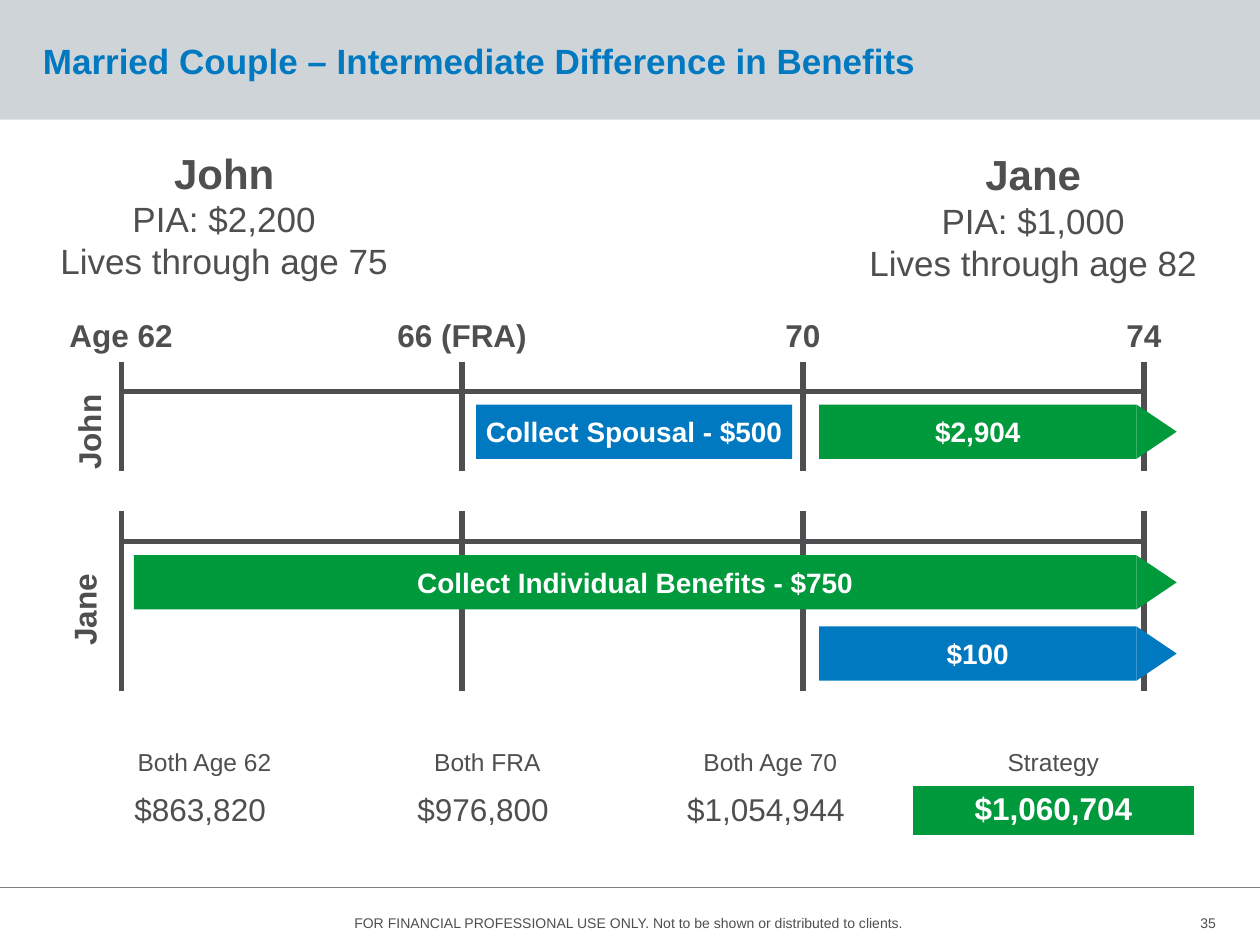
import pptx
import pptx.util
import pptx.dml.color
import pptx.enum.shapes
import pptx.enum.text
import lxml.etree

Pt = pptx.util.Pt
RGB = pptx.dml.color.RGBColor.from_string
SHAPES = pptx.enum.shapes.MSO_SHAPE
ALIGN = pptx.enum.text.PP_ALIGN
ANCHOR = pptx.enum.text.MSO_ANCHOR
COLORS = {"text": "4F4E50", "blue": "0079C1", "green": "009A3D",
          "band": "CFD4D8", "rule": "7E8083", "white": "FFFFFF"}
DRAWING = "http://schemas.openxmlformats.org/drawingml/2006/main"

deck = pptx.Presentation()
deck.slide_width, deck.slide_height = Pt(720), Pt(540)
page = deck.slides.add_slide(deck.slide_layouts[6])


def write(frame, text, size, color="text", bold=False, align=ALIGN.CENTER,
          margins=(7.2, 3.6), anchor=ANCHOR.TOP, wrap=True):
    frame.word_wrap = wrap
    frame.vertical_anchor = anchor
    frame.margin_left = frame.margin_right = Pt(margins[0])
    frame.margin_top = frame.margin_bottom = Pt(margins[1])
    para = frame.paragraphs[0]
    para.text = text
    para.alignment = align
    for span in para.runs:
        span.font.name = "Arial"
        span.font.size = Pt(size)
        span.font.bold = bold
        span.font.color.rgb = RGB(COLORS[color])
    return para


def draw_line(x1, y1, x2, y2, color="text", width=3):
    line = page.shapes.add_connector(
        pptx.enum.shapes.MSO_CONNECTOR.STRAIGHT, Pt(x1), Pt(y1), Pt(x2), Pt(y2))
    line.line.color.rgb = RGB(COLORS[color])
    line.line.width = Pt(width)
    properties = line._element.spPr
    lxml.etree.SubElement(properties, "{%s}effectLst" % DRAWING)


# Header band, title and footer rule
band = page.shapes.add_shape(SHAPES.RECTANGLE, 0, Pt(-0.5), Pt(720), Pt(69))
band.shadow.inherit = False
band.fill.solid()
band.fill.fore_color.rgb = RGB(COLORS["band"])
band.line.fill.background()
draw_line(0, 507, 720, 507, "rule", 0.75)
title = page.shapes.add_textbox(Pt(24.5), Pt(13), Pt(669), Pt(47))
heading = write(title.text_frame, "Married Couple – Intermediate Difference in Benefits",
                20, "blue", True, ALIGN.LEFT, (0, 0), ANCHOR.MIDDLE)
heading.line_spacing = Pt(20)

# Lifetime totals of each strategy
totals = [("Both Age 62", "$863,820 "), ("Both FRA", "$976,800 "),
          ("Both Age 70", "$1,054,944 "), ("Strategy", "$1,060,704")]
table = page.shapes.add_table(2, 4, Pt(36), Pt(424.8), Pt(646.8), Pt(52.8)).table
table.first_row = table.horz_banding = False
table.rows[0].height, table.rows[1].height = Pt(24), Pt(28.8)
for index, (label, total) in enumerate(totals):
    table.columns[index].width = Pt(161.7)
    best = label == "Strategy"
    for row, text in enumerate((label, total)):
        cell = table.cell(row, index)
        plain_total = row == 1 and not best
        highlight = row == 1 and best
        cell.margin_left = cell.margin_right = Pt(0 if plain_total else 7.2)
        cell.margin_top = cell.margin_bottom = Pt(0 if plain_total else 3.6)
        cell.vertical_anchor = ANCHOR.MIDDLE if plain_total else ANCHOR.TOP
        if highlight:
            cell.fill.solid()
            cell.fill.fore_color.rgb = RGB(COLORS["green"])
        else:
            cell.fill.background()
        para = cell.text_frame.paragraphs[0]
        para.text = text
        para.alignment = ALIGN.CENTER
        font = para.runs[0].font
        font.name, font.size, font.bold = "Arial", Pt(18 if row else 14), highlight
        font.color.rgb = RGB(COLORS["white" if highlight else "text"])

# Timelines: one axis per person with a tick at each age
ticks = [69.25 + 194.8 * step for step in range(4)]
for top, axis, bottom in [(206.6, 223.9, 269.3), (292.3, 309.6, 394.6)]:
    draw_line(ticks[0], axis, ticks[-1], axis)
    for x in ticks:
        draw_line(x, top, x, bottom)
for x, age in zip(ticks, ["Age 62", "66 (FRA)", "70", "74"]):
    box = page.shapes.add_textbox(Pt(x - 50), Pt(177.3), Pt(100), Pt(29))
    write(box.text_frame, age, 18, bold=True)

# People: facts on top, rotated name beside the timeline
people = [("John", "PIA: $2,200\vLives through age 75", 26.6, 80.6, 50.8, 247),
          ("Jane", "PIA: $1,000\vLives through age 82", 488.9, 81.4, 48.2, 348.5)]
for name, facts, left, top, center_x, center_y in people:
    box = page.shapes.add_textbox(Pt(left), Pt(top), Pt(203), Pt(85))
    para = write(box.text_frame, name + "\v" + facts, 20, wrap=False)
    para.runs[0].font.size = Pt(24)
    para.runs[0].font.bold = True
    box = page.shapes.add_textbox(Pt(center_x - 29), Pt(center_y - 14.5), Pt(58), Pt(29))
    box.rotation = 270
    write(box.text_frame, name, 18, bold=True, wrap=False)

# Benefit bars; those that continue past 74 end in a point
bar_height, point_length = 31, 23
bars = [("$2,904", 468, 231.2, 649.4, "green", True),
        ("Collect Spousal - $500", 272, 231.2, 452.6, "blue", False),
        ("Collect Individual Benefits - $750", 76.5, 317.3, 649.4, "green", True),
        ("$100", 468, 358, 649.4, "blue", True)]
for text, left, top, right, color, continues in bars:
    bar = page.shapes.add_shape(SHAPES.RECTANGLE, Pt(left), Pt(top),
                                Pt(right - left), Pt(bar_height))
    write(bar.text_frame, text, 16, "white", True, margins=(7.2, 0),
          anchor=ANCHOR.MIDDLE, wrap=False)
    parts = [bar]
    if continues:
        point = page.shapes.add_shape(
            SHAPES.ISOSCELES_TRIANGLE,
            Pt(right + (point_length - bar_height) / 2),
            Pt(top + (bar_height - point_length) / 2),
            Pt(bar_height), Pt(point_length))
        point.rotation = 90
        parts.append(point)
    for part in parts:
        part.shadow.inherit = False
        part.fill.solid()
        part.fill.fore_color.rgb = RGB(COLORS[color])
        part.line.fill.background()

# Footer
notice = page.shapes.add_textbox(Pt(118), Pt(519), Pt(483), Pt(17.3))
write(notice.text_frame,
      "FOR FINANCIAL PROFESSIONAL USE ONLY. Not to be shown or distributed to clients.", 8)
number = page.shapes.add_textbox(Pt(666), Pt(519), Pt(28.8), Pt(17.3))
write(number.text_frame, "35", 8, align=ALIGN.RIGHT, margins=(0, 0), anchor=ANCHOR.MIDDLE)

deck.save("out.pptx")
